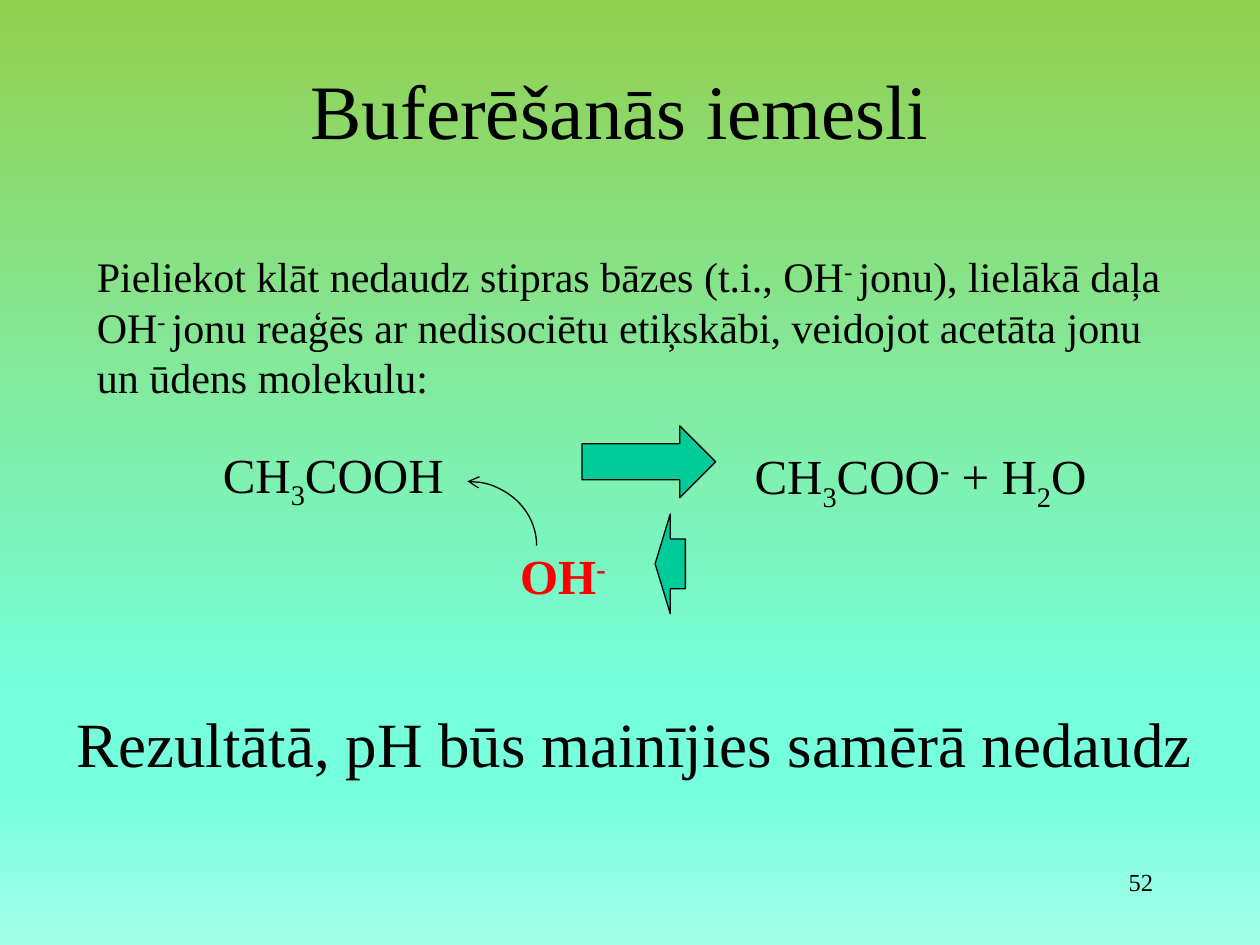
from lxml.etree import SubElement
from pptx import Presentation
from pptx.dml.color import RGBColor
from pptx.enum.shapes import MSO_SHAPE
from pptx.enum.text import MSO_ANCHOR, MSO_AUTO_SIZE, PP_ALIGN
from pptx.oxml.ns import qn
from pptx.util import Pt

# Content: spans are (text, baseline shift in percent)
COLORS = {"text": "000000", "ion": "FF0000", "arrow": "00CC99"}
BACKGROUND = [(0, "92D050"), (74, "75FFDD"), (83, "75FFDD"), (100, "A3FFE8")]
FONT = "Times New Roman"
SUB, SUP = -25, 30

TITLE = {"at": (48.24, 17.28, 612, 90), "size": 44, "align": PP_ALIGN.CENTER,
         "spans": [("Buferēšanās iemesli", 0)]}
TEXTS = [
    {"at": (48.24, 139.68, 629.28, 94.32), "size": 24,
     "spans": [("Pieliekot klāt nedaudz stipras bāzes (t.i., OH", 0), ("- ", SUP),
               ("jonu), lielākā daļa OH", 0), ("- ", SUP),
               ("jonu reaģēs ar nedisociētu etiķskābi, veidojot acetāta jonu "
                "un ūdens molekulu:", 0)]},
    {"at": (120.24, 250.56, 143.28, 41.04), "size": 28, "wrap": False,
     "spans": [("CH", 0), ("3", SUB), ("COOH", 0)]},
    {"at": (424.08, 251.28, 214.56, 41.04), "size": 28, "wrap": False,
     "spans": [("CH", 0), ("3", SUB), ("COO", 0), ("-", SUP),
               (" + H", 0), ("2", SUB), ("O", 0)]},
    {"at": (290.16, 308.16, 71.28, 41.04), "size": 28, "color": "ion", "bold": True,
     "spans": [("OH", 0), ("-", SUP)]},
    {"at": (36.72, 398.88, 692.64, 51.12), "size": 36,
     "spans": [("Rezultātā, pH būs mainījies samērā nedaudz", 0)]},
    {"at": (516.24, 491.76, 149.76, 36), "size": 14, "align": PP_ALIGN.RIGHT,
     "spans": [("52", 0)]},
]
FORWARD = (332.64, 243.36, 76.32, 41.04)
REVERSE = (374.4, 293.76, 17.28, 56.88)
ATTACK = (227.52, 275.04, 79.2, 73.44)


def points(lengths):
    return [Pt(length) for length in lengths]


def write(box, item):
    frame = box.text_frame
    frame.word_wrap = item.get("wrap", True)
    para = frame.paragraphs[0]
    para.alignment = item.get("align", PP_ALIGN.LEFT)
    formats = {"name": FONT, "size": Pt(item["size"]), "bold": item.get("bold", False)}
    for text, shift in item["spans"]:
        span = para.add_run()
        span.text = text
        for name, value in formats.items():
            setattr(span.font, name, value)
        span.font.color.rgb = RGBColor.from_string(COLORS[item.get("color", "text")])
        if shift:
            span._r.get_or_add_rPr().set("baseline", str(shift * 1000))


def add_outlined(page, kind, at, fill=None):
    shape = page.shapes.add_shape(kind, *points(at))
    shape.shadow.inherit = False
    shape.line.color.rgb = RGBColor.from_string(COLORS["text"])
    shape.line.width = Pt(0.75)
    if fill:
        shape.fill.solid()
        shape.fill.fore_color.rgb = RGBColor.from_string(fill)
    else:
        shape.fill.background()
    return shape


deck = Presentation()
deck.slide_width, deck.slide_height = Pt(720), Pt(540)
page = deck.slides.add_slide(deck.slide_layouts[5])

# Background gradient, top to bottom
fill = page.background.fill
fill.gradient()
fill.gradient_angle = 270
stops = page.background._cSld.find(".//" + qn("a:gsLst"))
for stop in list(stops):
    stops.remove(stop)
for position, color in BACKGROUND:
    stop = SubElement(stops, qn("a:gs"), pos=str(position * 1000))
    SubElement(stop, qn("a:srgbClr"), val=color)

# Title
title = page.shapes.title
title.left, title.top, title.width, title.height = points(TITLE["at"])
title.text_frame.vertical_anchor = MSO_ANCHOR.MIDDLE
write(title, TITLE)

# Explanation, formulas, conclusion and page number
for item in TEXTS:
    box = page.shapes.add_textbox(*points(item["at"]))
    write(box, item)
    box.text_frame.auto_size = MSO_AUTO_SIZE.SHAPE_TO_FIT_TEXT

# Reaction arrows
add_outlined(page, MSO_SHAPE.RIGHT_ARROW, FORWARD, COLORS["arrow"])
reverse = add_outlined(page, MSO_SHAPE.RIGHT_ARROW, REVERSE, COLORS["arrow"])
reverse._element.spPr.find(qn("a:xfrm")).set("flipH", "1")

# Curved arrow from the hydroxide ion to the acid
attack = add_outlined(page, MSO_SHAPE.ARC, ATTACK)
SubElement(attack._element.spPr.find(qn("a:ln")), qn("a:headEnd"), type="arrow")

deck.save("out.pptx")
